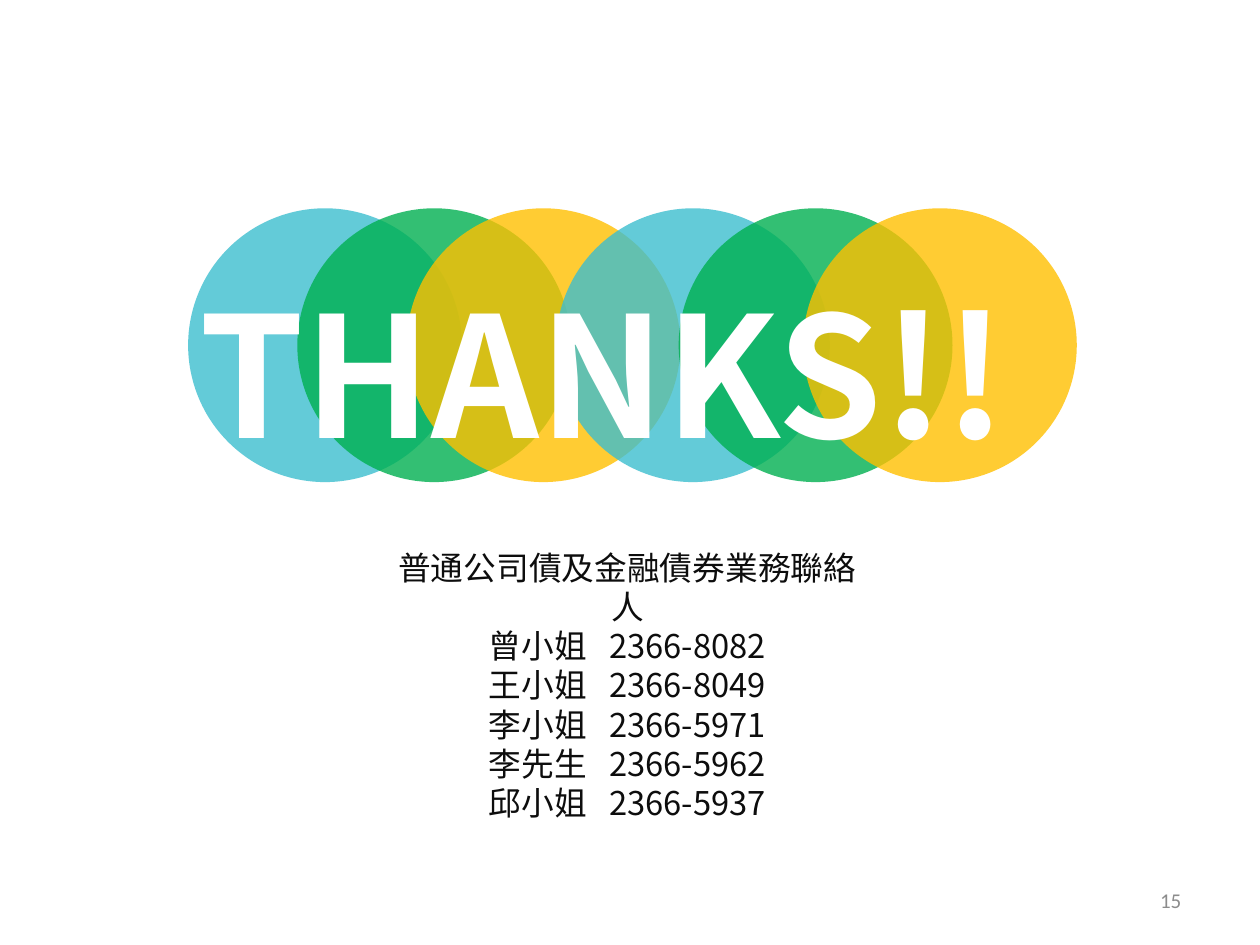
import pptx
import pptx.dml.color
import pptx.enum.shapes
import pptx.enum.text
import pptx.oxml
import pptx.oxml.ns
import pptx.util
from pptx.util import Inches

CJK_FONT = "Noto Sans CJK SC"
ALIGN = pptx.enum.text.PP_ALIGN
ANCHOR = pptx.enum.text.MSO_ANCHOR
SLIDE_WIDTH = 7.5
CIRCLE_COLORS = ["3DBECF", "00B050", "FFC000"]
CIRCLE_LEFTS = [1.12, 1.77, 2.42, 3.31, 4.04, 4.78]
CONTACTS = [
    ("曾小姐", "2366-8082"),
    ("王小姐", "2366-8049"),
    ("李小姐", "2366-5971"),
    ("李先生", "2366-5962"),
    ("邱小姐", "2366-5937"),
]


def color(hex_string):
    return pptx.dml.color.RGBColor.from_string(hex_string)


def add_circle(slide, left, top, diameter, fill, opacity):
    shape = slide.shapes.add_shape(
        pptx.enum.shapes.MSO_SHAPE.OVAL,
        Inches(left), Inches(top), Inches(diameter), Inches(diameter))
    shape.shadow.inherit = False
    shape.line.fill.background()
    shape.fill.solid()
    shape.fill.fore_color.rgb = color(fill)
    # Transparency
    rgb = shape.fill._xPr.find(".//" + pptx.oxml.ns.qn("a:srgbClr"))
    alpha = pptx.oxml.parse_xml(
        f'<a:alpha {pptx.oxml.ns.nsdecls("a")} val="{opacity * 1000}"/>')
    rgb.append(alpha)


def add_text(slide, lines, left, top, width, height, *, size, fill,
             font=CJK_FONT, bold=False, align=ALIGN.LEFT,
             anchor=ANCHOR.TOP, wrap=True, gap=0):
    """Each line is a tuple of run texts; gap widens single spaces, in points."""
    box = slide.shapes.add_textbox(
        Inches(left), Inches(top), Inches(width), Inches(height))
    frame = box.text_frame
    frame.word_wrap = wrap
    frame.vertical_anchor = anchor
    for index, line in enumerate(lines):
        paragraph = frame.add_paragraph() if index else frame.paragraphs[0]
        paragraph.alignment = align
        for text in line:
            run = paragraph.add_run()
            run.text = text
            run.font.size = pptx.util.Pt(size)
            run.font.bold = bold
            run.font.color.rgb = color(fill)
            run.font.name = font
            # East Asian typeface and widened space
            properties = run.font._element
            properties.append(pptx.oxml.parse_xml(
                f'<a:ea {pptx.oxml.ns.nsdecls("a")} typeface="{font}"/>'))
            if text == " ":
                properties.set("spc", str(round(gap * 100)))


def main():
    presentation = pptx.Presentation()
    presentation.slide_width = Inches(SLIDE_WIDTH)
    presentation.slide_height = Inches(SLIDE_WIDTH * 3 / 4)
    slide = presentation.slides.add_slide(presentation.slide_layouts[6])

    # Overlapping circles behind the greeting
    for index, left in enumerate(CIRCLE_LEFTS):
        fill = CIRCLE_COLORS[index % len(CIRCLE_COLORS)]
        add_circle(slide, left, 1.24, 1.63, fill, opacity=80)
    add_text(slide, [("THANKS!!",)], 1.09, 1.56, 5.29, 1.31,
             size=72, fill="FFFFFF", bold=True, wrap=False)

    # Contact list
    lines = [("普通公司債及金融債券業務聯絡人",)]
    lines += [(name, " ", phone) for name, phone in CONTACTS]
    add_text(slide, lines, 2.18, 3.21, 3.11, 1.51,
             size=14, fill="0D0D0D", align=ALIGN.CENTER, gap=6.3)

    # Slide number
    add_text(slide, [("15",)], 5.38, 5.21, 1.75, 0.3, size=9, fill="8C8C8C",
             font="Calibri", align=ALIGN.RIGHT, anchor=ANCHOR.MIDDLE)

    presentation.save("out.pptx")


if __name__ == "__main__":
    main()
